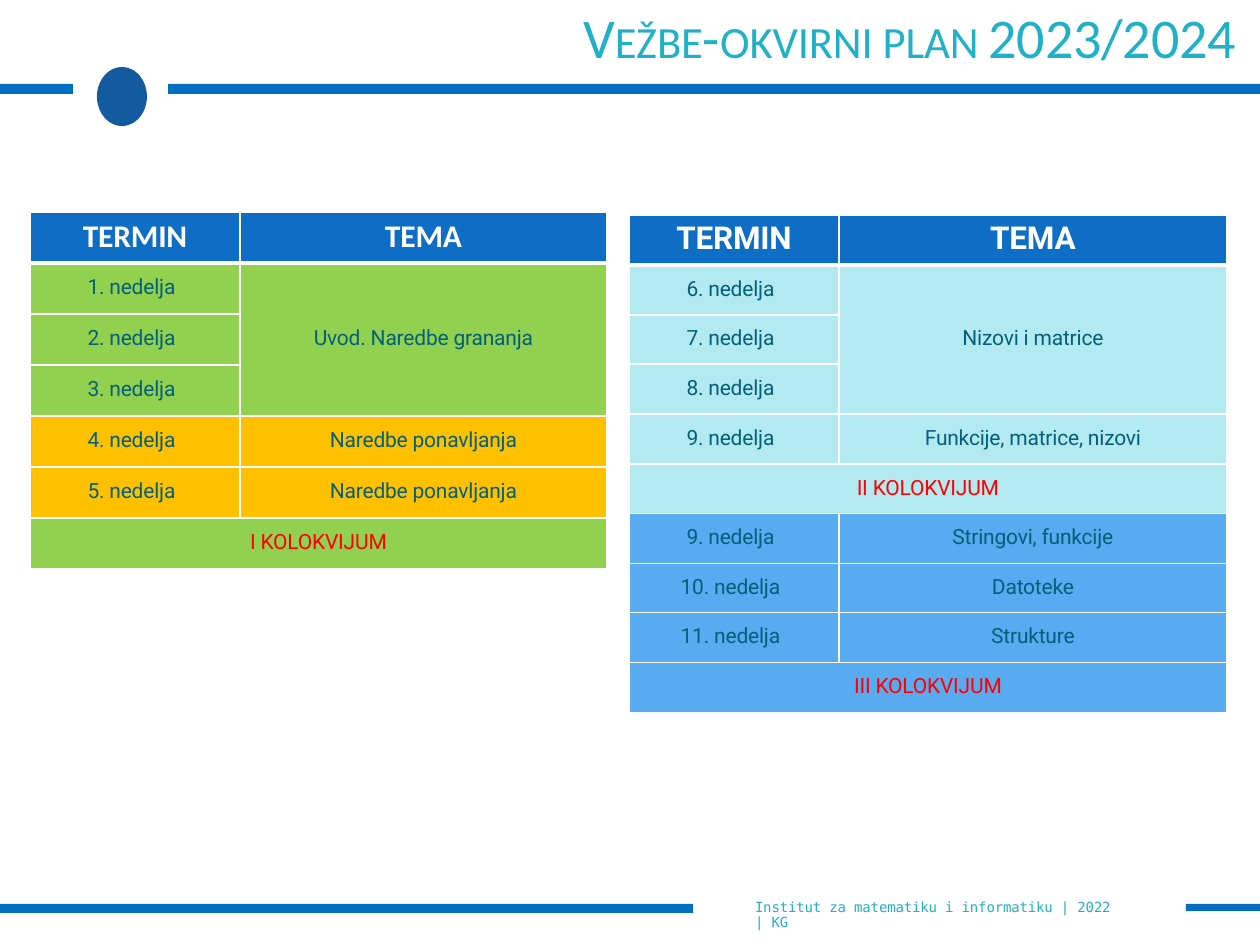
from lxml import etree
from pptx import Presentation
from pptx.dml.color import RGBColor
from pptx.enum.shapes import MSO_SHAPE
from pptx.enum.text import MSO_ANCHOR, MSO_AUTO_SIZE, PP_ALIGN
from pptx.oxml.ns import qn
from pptx.util import Pt

PX = 914400 / 126
RECT, OVAL = MSO_SHAPE.RECTANGLE, MSO_SHAPE.OVAL
TOP, MIDDLE = MSO_ANCHOR.TOP, MSO_ANCHOR.MIDDLE
LEFT, CENTER = PP_ALIGN.LEFT, PP_ALIGN.CENTER
TITLE_ONLY = 5

COLORS = {
    "white": "FFFFFF", "bar": "006FC0", "emblem": "135A9F", "accent": "20B1C8",
    "header": "0E6EC5", "ink": "04607A", "exam": "FF0000",
    "green": "92D050", "amber": "FFC000", "aqua": "B3EAF1", "blue": "58AAF1",
}

# Each row: term, topic, fill. A topic of None continues the one above;
# a term of None makes the topic an exam across both columns.
FIRST_TERM = [
    ("1. nedelja", "Uvod. Naredbe grananja", "green"),
    ("2. nedelja", None, "green"),
    ("3. nedelja", None, "green"),
    ("4. nedelja", "Naredbe ponavljanja", "amber"),
    ("5. nedelja", "Naredbe ponavljanja", "amber"),
    (None, "I KOLOKVIJUM", "green"),
]
SECOND_TERM = [
    ("6. nedelja", "Nizovi i matrice", "aqua"),
    ("7. nedelja", None, "aqua"),
    ("8. nedelja", None, "aqua"),
    ("9. nedelja", "Funkcije, matrice, nizovi", "aqua"),
    (None, "II KOLOKVIJUM", "aqua"),
    ("9. nedelja", "Stringovi, funkcije", "blue"),
    ("10. nedelja", "Datoteke", "blue"),
    ("11. nedelja", "Strukture", "blue"),
    (None, "III KOLOKVIJUM", "blue"),
]


def px(*values):
    return [round(v * PX) for v in values]


def rgb(name):
    return RGBColor.from_string(COLORS[name])


def write(tf, runs, font, color, size=None, bold=False, align=LEFT,
          spacing=-10, line=None):
    """Fill the first paragraph; runs is a string or (text, size) pairs."""
    if isinstance(runs, str):
        runs = [(runs, size)]
    p = tf.paragraphs[0]
    p.alignment = align
    if line:
        p.line_spacing = Pt(line)
    for text, points in runs:
        r = p.add_run()
        r.text = text
        r.font.name = font
        r.font.size = Pt(points)
        r.font.bold = bold
        r.font.color.rgb = rgb(color)
        r._r.get_or_add_rPr().set("spc", str(spacing))


def set_frame(tf, top=0, wrap=True):
    tf.margin_left = tf.margin_right = tf.margin_bottom = 0
    tf.margin_top = px(top)[0]
    tf.vertical_anchor = TOP
    tf.auto_size = MSO_AUTO_SIZE.NONE
    tf.word_wrap = wrap


def add_block(s, kind, box, color):
    sp = s.shapes.add_shape(kind, *px(*box))
    sp.shadow.inherit = False
    sp.fill.solid()
    sp.fill.fore_color.rgb = rgb(color)
    sp.line.fill.background()


def add_title(s):
    sp = s.shapes.title
    sp.left, sp.top, sp.width, sp.height = px(583, 0, 667, 71)
    set_frame(sp.text_frame, top=3, wrap=False)
    write(sp.text_frame,
          [("V", 32), ("EŽBE", 25.5), ("-", 32), ("OKVIRNI PLAN ", 25.5),
           ("2023/2024", 32)], "Calibri", "accent")


def add_footer(s):
    tf = s.shapes.add_textbox(*px(755, 900, 372, 30)).text_frame
    set_frame(tf)
    write(tf, "Institut za matematiku i informatiku | 2022 | KG",
          "DejaVu Sans Mono", "accent", size=8, line=8.6)


def set_borders(cell, top=1, bottom=1):
    tcPr = cell._tc.get_or_add_tcPr()
    for tag, points in (("a:lnL", 1), ("a:lnR", 1), ("a:lnT", top), ("a:lnB", bottom)):
        ln = etree.SubElement(tcPr, qn(tag), w=str(Pt(points)))
        fill = etree.SubElement(ln, qn("a:solidFill"))
        etree.SubElement(fill, qn("a:srgbClr"), val=COLORS["white"])


def style_cell(cell, fill, top=1, bottom=1):
    set_borders(cell, top, bottom)
    cell.fill.solid()
    cell.fill.fore_color.rgb = rgb(fill)
    cell.vertical_anchor = MIDDLE
    cell.margin_left = cell.margin_right = cell.margin_top = 0
    cell.margin_bottom = px(2)[0]


def add_schedule(s, box, columns, header_font, rows):
    height, count = box[3], len(rows) + 1
    table = s.shapes.add_table(count, 2, *px(*box)).table
    for col, width in zip(table.columns, px(*columns)):
        col.width = width
    edges = [round(height * i / count) for i in range(count + 1)]
    for row, start, end in zip(table.rows, edges, edges[1:]):
        row.height = px(end - start)[0]

    for c, text in enumerate(("TERMIN", "TEMA")):
        cell = table.cell(0, c)
        style_cell(cell, "header", bottom=3)
        write(cell.text_frame, text, header_font, "white", size=18, bold=True, align=CENTER)

    topic_row = 1
    for i, (term, topic, fill) in enumerate(rows, 1):
        left, right = table.cell(i, 0), table.cell(i, 1)
        for cell in (left, right):
            style_cell(cell, fill, top=3 if i == 1 else 1)
        if term is None:
            left.merge(right)
            write(left.text_frame, topic, "Roboto", "exam", size=12, align=CENTER)
            continue
        left.margin_right = px(7)[0]
        write(left.text_frame, term, "Roboto", "ink", size=12, align=CENTER)
        if topic:
            topic_row = i
            write(right.text_frame, topic, "Roboto", "ink", size=12, align=CENTER)
        elif i == len(rows) or rows[i][1]:
            table.cell(topic_row, 1).merge(right)


def main():
    prs = Presentation()
    prs.slide_width, prs.slide_height = px(1260, 945)
    s = prs.slides.add_slide(prs.slide_layouts[TITLE_ONLY])

    add_block(s, OVAL, (97, 67, 50, 59), "emblem")
    for box in ((168, 84, 1092, 10), (0, 84, 73, 10),
                (0, 904, 693, 9), (1186, 904, 74, 7)):
        add_block(s, RECT, box, "bar")
    add_title(s)
    add_footer(s)
    add_schedule(s, (30, 212, 577, 357), (210, 367), "Calibri", FIRST_TERM)
    add_schedule(s, (629, 215, 598, 498), (210, 388), "Roboto", SECOND_TERM)
    prs.save("out.pptx")


if __name__ == "__main__":
    main()
